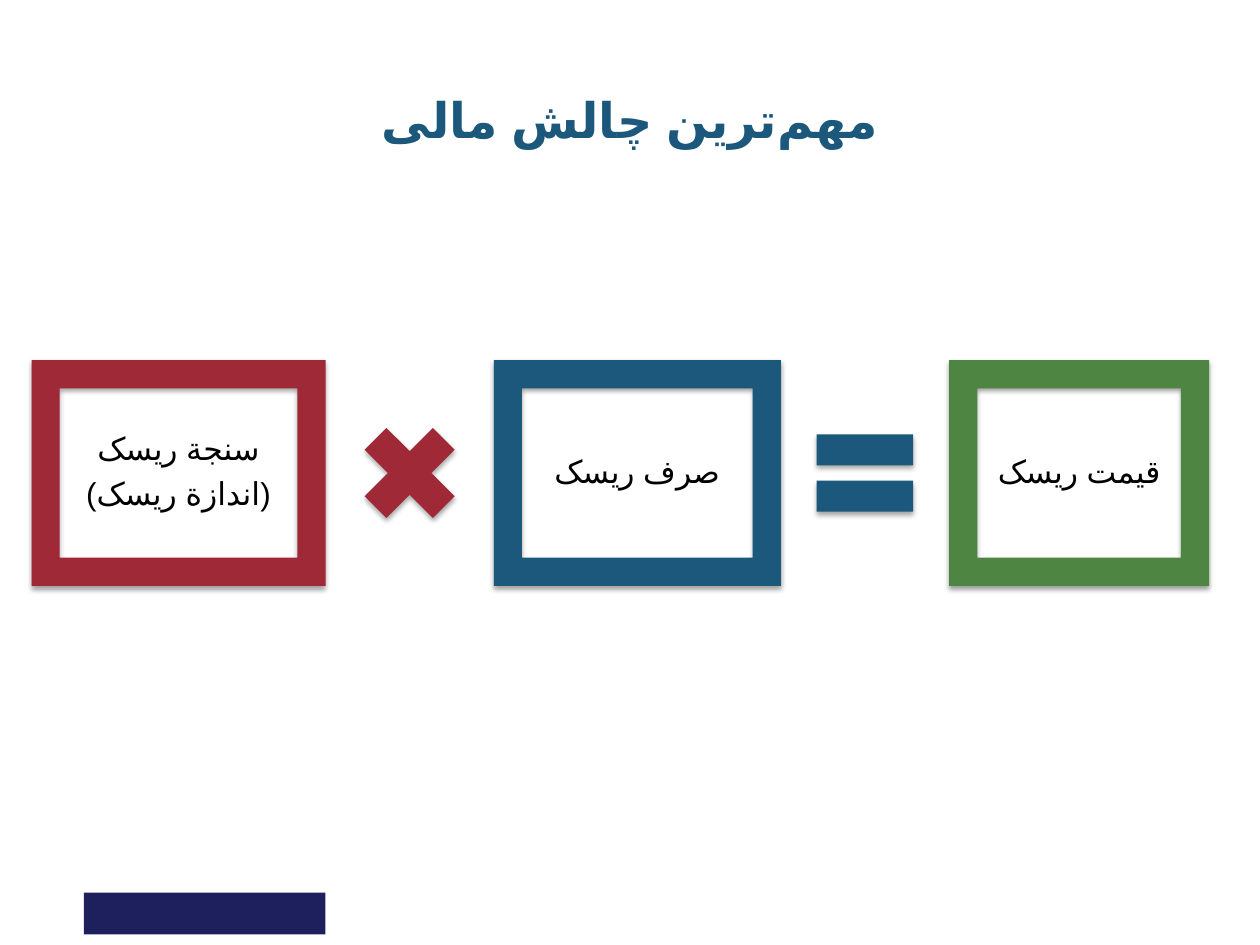
from lxml.etree import SubElement
from pptx import Presentation
from pptx.dml.color import RGBColor
from pptx.enum.shapes import MSO_SHAPE
from pptx.enum.text import MSO_ANCHOR, PP_ALIGN
from pptx.oxml.ns import qn
from pptx.util import Pt

THEME = {
    "font": "Arial", "title_size": 28, "body_size": 18,
    "navy": "1D205D", "red": "9F2936", "blue": "1B587C",
    "green": "4E8542", "black": "000000",
}
ZERO_WIDTH_NON_JOINER = chr(0x200C)
TITLE = ZERO_WIDTH_NON_JOINER.join(["مهم", "ترین چالش مالی"])
FRAME, TIMES, EQUALS = MSO_SHAPE.FRAME, MSO_SHAPE.MATH_MULTIPLY, MSO_SHAPE.MATH_EQUAL
EQUATION = [
    (FRAME, 168, "red", ["سنجة ریسک", "(اندازة ریسک)"]),
    (TIMES, 75, "red", []),
    (FRAME, 164, "blue", ["صرف ریسک"]),
    (EQUALS, 75, "blue", []),
    (FRAME, 148.5, "green", ["قیمت ریسک"]),
]
LEFT, MIDDLE, GAP, FRAME_HEIGHT = 18, 270.3, 10.6, 129


def add_text(s, lines, x, y, w, h, size, color, bold=False, inset=2, spacing=0.9, after=0):
    """Add a centred right-to-left text box, one paragraph per line."""
    tf = s.shapes.add_textbox(Pt(x), Pt(y), Pt(w), Pt(h)).text_frame
    tf.word_wrap = True
    tf.vertical_anchor = MSO_ANCHOR.MIDDLE
    tf.margin_left = tf.margin_right = tf.margin_top = tf.margin_bottom = Pt(inset)
    for i, line in enumerate(lines):
        p = tf.paragraphs[0] if i == 0 else tf.add_paragraph()
        p.alignment = PP_ALIGN.CENTER
        p.line_spacing = spacing
        p.space_after = Pt(after)
        p._p.get_or_add_pPr().set("rtl", "1")
        r = p.add_run()
        r.text = line
        r.font.size = Pt(size)
        r.font.bold = bold
        r.font.color.rgb = RGBColor.from_string(THEME[color])
        r.font.name = THEME["font"]
        rPr = r._r.get_or_add_rPr()
        rPr.set("lang", "fa-IR")
        SubElement(rPr, qn("a:cs"), typeface=THEME["font"])


def add_block(s, kind, x, y, w, h, color, shadow=None):
    """Add a filled shape with an optional (distance, opacity) drop shadow."""
    sp = s.shapes.add_shape(kind, Pt(x), Pt(y), Pt(w), Pt(h))
    sp.fill.solid()
    sp.fill.fore_color.rgb = RGBColor.from_string(THEME[color])
    sp.line.fill.background()
    sp.shadow.inherit = False
    if shadow:
        distance, opacity = shadow
        effects = sp._element.spPr.find(qn("a:effectLst"))
        outer = SubElement(effects, qn("a:outerShdw"), blurRad=str(Pt(3.1)),
                           dist=str(Pt(distance)), dir="5400000", rotWithShape="0")
        tint = SubElement(outer, qn("a:srgbClr"), val=THEME["black"])
        SubElement(tint, qn("a:alpha"), val=str(opacity * 1000))


def main():
    """Build the risk price equation slide."""
    prs = Presentation()
    prs.slide_width, prs.slide_height = Pt(720), Pt(540)
    s = prs.slides.add_slide(prs.slide_layouts[6])
    add_block(s, MSO_SHAPE.RECTANGLE, 48, 510, 138, 24, "navy")
    add_text(s, [TITLE], 54, 39.6, 612, 57, THEME["title_size"], "blue",
             bold=True, inset=3.6, spacing=1.0)
    x = LEFT
    for kind, w, color, lines in EQUATION:
        h = FRAME_HEIGHT if kind == FRAME else w
        y = MIDDLE - h / 2
        add_block(s, kind, x, y, w, h, color, (1.6, 38) if kind == FRAME else (1.8, 35))
        if lines:
            add_text(s, lines, x, y, w, h, THEME["body_size"], "black", after=6.3)
        x += w + GAP
    prs.save("out.pptx")


if __name__ == "__main__":
    main()
